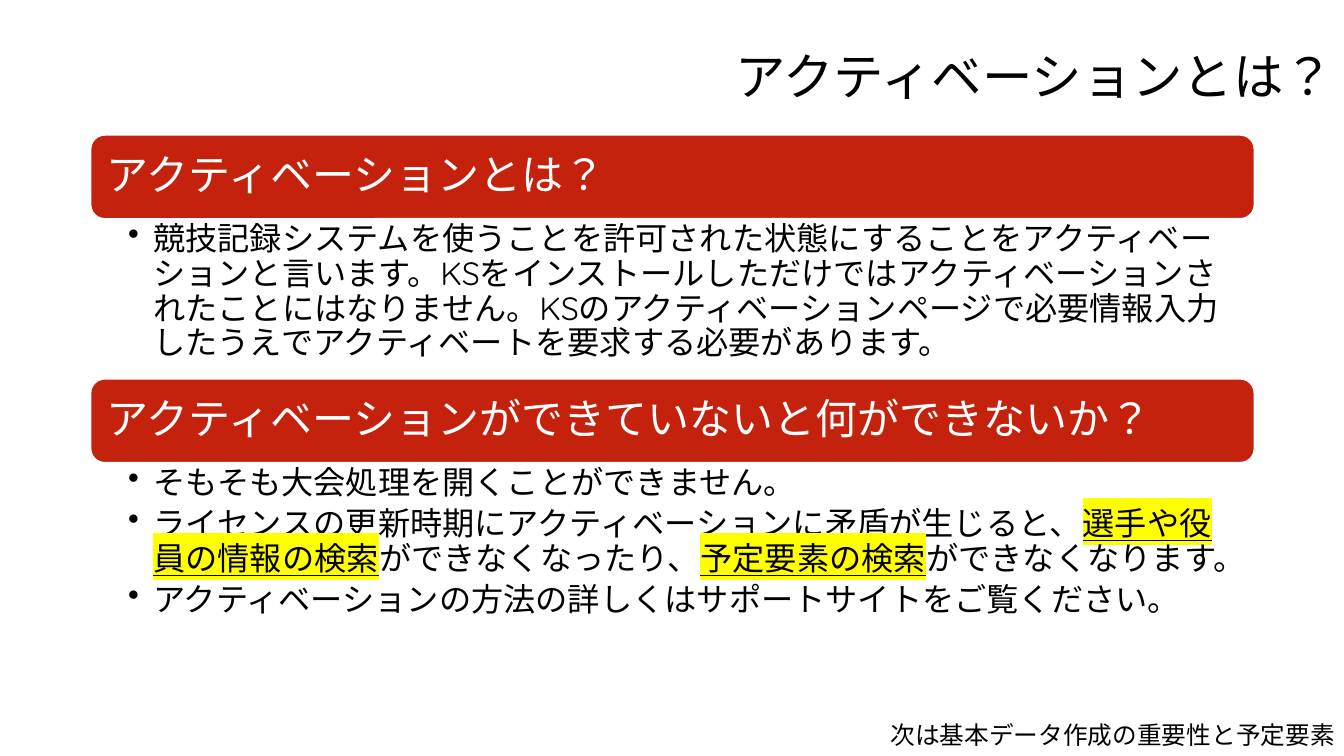
from lxml import etree
from pptx import Presentation
from pptx.dml.color import RGBColor as RGB
from pptx.enum.lang import MSO_LANGUAGE_ID as LANG
from pptx.enum.shapes import MSO_SHAPE as SHAPE
from pptx.enum.text import MSO_ANCHOR as ANCHOR, PP_ALIGN as ALIGN
from pptx.oxml.ns import qn
from pptx.util import Inches, Pt

COLORS = {"text": "000000", "white": "FFFFFF", "red": "C4220D", "mark": "FFFF00"}
FONT = "Quicksand"
TITLE = "アクティベーションとは？"
FOOTER = "次は基本データ作成の重要性と予定要素"
SECTIONS = [
    ("アクティベーションとは？", 1.34, 1.6, [
        [("競技記録システムを使うことを許可された状態にすることをアクティベーションと言います。"
          "KSをインストールしただけではアクティベーションされたことにはなりません。"
          "KSのアクティベーションページで必要情報入力したうえでアクティベートを要求する必要があります。",
          False)],
    ]),
    ("アクティベーションができていないと何ができないか？", 3.76, 1.77, [
        [("そもそも大会処理を開くことができません。", False)],
        [("ライセンスの更新時期にアクティベーションに矛盾が生じると、", False),
         ("選手や役員の情報の検索", True),
         ("ができなくなったり、", False),
         ("予定要素の検索", True),
         ("ができなくなります。", False)],
        [("アクティベーションの方法の詳しくはサポートサイトをご覧ください。", False)],
    ]),
]
LEFT, WIDTH, BAR = 0.9, 11.54, 0.83


def color(name):
    """Return the named colour."""
    return RGB.from_string(COLORS[name])


def set_frame(shape, insets, anchor):
    """Set wrapping, insets and anchor, and return the text frame."""
    frame = shape.text_frame
    frame.word_wrap = True
    frame.vertical_anchor = anchor
    (frame.margin_left, frame.margin_top,
     frame.margin_right, frame.margin_bottom) = map(Inches, insets)
    return frame


def add_run(para, text, size, tint="text", marked=False):
    """Add one styled run, underlined and highlighted when marked."""
    run = para.add_run()
    run.text = text
    font = run.font
    font.size, font.name = Pt(size), FONT
    font.language_id = LANG.JAPANESE
    font.color.rgb = color(tint)
    if marked:
        font.underline = True
        light = etree.Element(qn("a:highlight"))
        etree.SubElement(light, qn("a:srgbClr"), val=COLORS["mark"])
        font._element.find(qn("a:solidFill")).addnext(light)


def add_label(slide, text, box, size):
    """Add a right-aligned line of text."""
    shape = slide.shapes.add_textbox(*map(Inches, box))
    para = set_frame(shape, (0.1, 0.05, 0.1, 0.05), ANCHOR.MIDDLE).paragraphs[0]
    para.alignment, para.line_spacing = ALIGN.RIGHT, 0.9
    add_run(para, text, size)


def add_bar(slide, text, top):
    """Add a red heading bar."""
    bar = slide.shapes.add_shape(
        SHAPE.ROUNDED_RECTANGLE, *map(Inches, (LEFT, top, WIDTH, BAR)))
    bar.shadow.inherit = False
    bar.fill.solid()
    bar.fill.fore_color.rgb = color("red")
    bar.line.color.rgb = color("white")
    bar.line.width = Pt(1)
    para = set_frame(bar, (0.12,) * 4, ANCHOR.MIDDLE).paragraphs[0]
    para.alignment, para.line_spacing = ALIGN.LEFT, 0.9
    add_run(para, text, 30, "white")


def add_list(slide, items, top, height):
    """Add the bulleted text below a bar."""
    shape = slide.shapes.add_textbox(*map(Inches, (LEFT, top, WIDTH, height)))
    frame = set_frame(shape, (0.37, 0.04, 0.23, 0.04), ANCHOR.TOP)
    for i, runs in enumerate(items):
        para = frame.add_paragraph() if i else frame.paragraphs[0]
        props = para._p.get_or_add_pPr()
        props.set("marL", str(Inches(0.25)))
        props.set("indent", str(Inches(-0.25)))
        etree.SubElement(props, qn("a:buChar"), char="•")
        para.level, para.line_spacing, para.space_after = 1, 0.9, Pt(4.6)
        for text, marked in runs:
            add_run(para, text, 23, marked=marked)


def main():
    """Build and save the slide."""
    deck = Presentation()
    deck.slide_width, deck.slide_height = Inches(13.33), Inches(7.5)
    slide = deck.slides.add_slide(deck.slide_layouts[6])
    add_label(slide, TITLE, (1.77, 0.49, 11.56, 0.6), 36)
    for head, top, height, items in SECTIONS:
        add_bar(slide, head, top)
        add_list(slide, items, top + BAR, height)
    add_label(slide, FOOTER, (7.66, 7.12, 5.68, 0.38), 17.6)
    deck.save("out.pptx")


if __name__ == "__main__":
    main()
